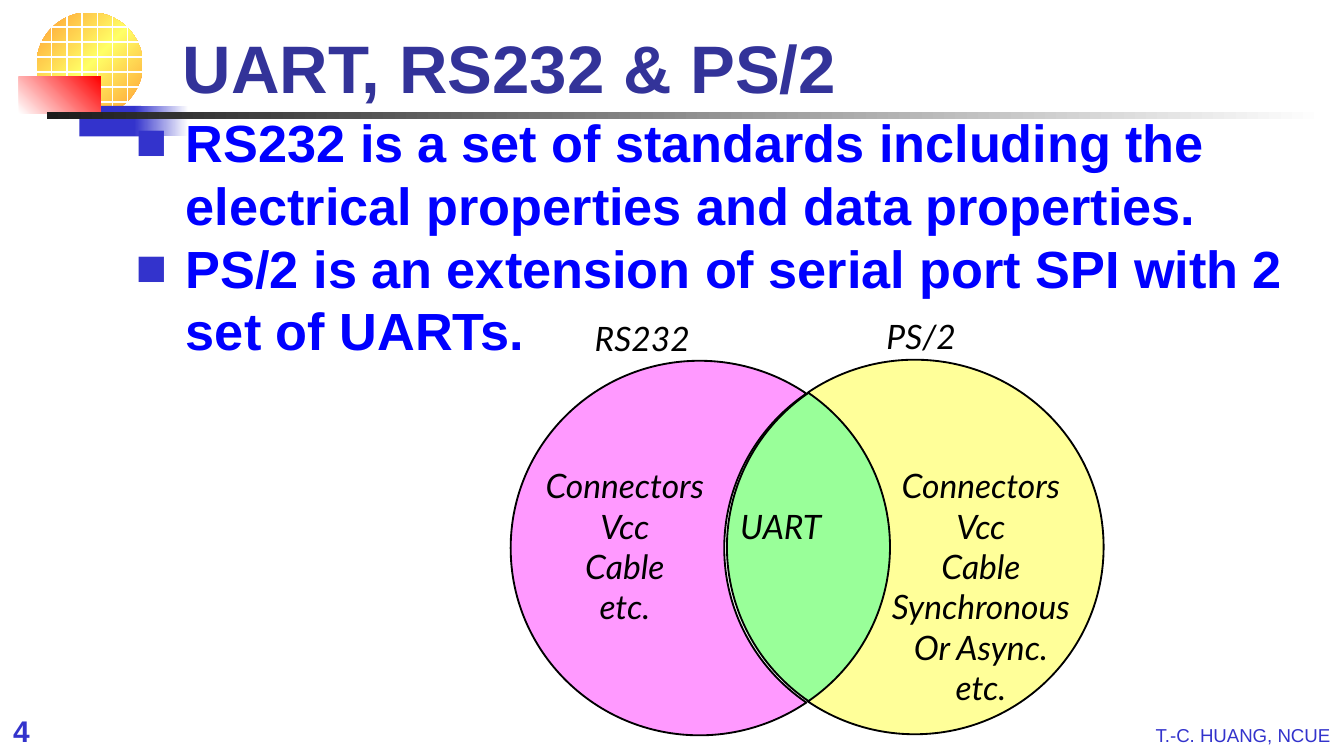
import dataclasses
import copy
import math

import lxml.etree
import pptx
import pptx.dml.color
import pptx.enum.shapes
import pptx.enum.text
import pptx.oxml.ns
import pptx.util

Cm = pptx.util.Cm
Pt = pptx.util.Pt
Align = pptx.enum.text.PP_ALIGN
Anchor = pptx.enum.text.MSO_ANCHOR
Preset = pptx.enum.shapes.MSO_SHAPE

COLORS = {
    "title": "333399", "body": "0000FF", "accent": "3333CC", "ink": "000000",
    "white": "FFFFFF", "orange": "FF9933", "sun": "FFFF66", "red": "FF0000",
    "bar": "1C1C1C", "shared": "99FF99", "ps2": "FFFF99", "rs232": "FF99FF",
}


@dataclasses.dataclass
class Area:
    left: float
    top: float
    width: float
    height: float

    def lengths(self) -> tuple:
        return tuple(Cm(value) for value in (self.left, self.top, self.width, self.height))


@dataclasses.dataclass
class Block:
    area: Area
    stops: tuple
    angle: float = 0
    preset: int = Preset.RECTANGLE


@dataclasses.dataclass
class Label:
    area: Area
    lines: tuple


SUN = Area(0.69, 0.23, 2.01, 1.98)
GRID_COUNT = 7
BLOCKS = (
    Block(Area(1.5, 2, 1.17, 0.58), ("accent",)),
    Block(Area(2.54, 2, 1.02, 0.58), ("accent", "white")),
    Block(Area(0.36, 1.45, 1.55, 0.69), ("white", "red"), 45),
    Block(Area(0.89, 2.12, 24.16, 0.13), ("bar", "white")),
)
LABELS = (
    Label(Area(13.74, 9.43, 2.03, 1.02), ("UART",)),
    Label(Area(11, 5.89, 2.28, 1.02), ("RS232",)),
    Label(Area(16.51, 5.84, 1.8, 1.02), ("PS/2",)),
    Label(Area(10.06, 8.67, 3.5, 3.33), ("Connectors", "Vcc", "Cable", "etc.")),
    Label(Area(16.61, 8.67, 3.86, 4.88),
          ("Connectors", "Vcc", "Cable", "Synchronous", "Or Async.", "etc.")),
)
BODY = (
    "RS232 is a set of standards including the electrical properties and data properties.",
    "PS/2 is an extension of serial port SPI with 2 set of UARTs.",
)
RADIUS_X, RADIUS_Y = 3.57, 3.54
HALF_CHORD = 2.92
SPREAD = math.asin(HALF_CHORD / RADIUS_Y)
OFFSET = RADIUS_X * math.cos(SPREAD)
QUARTER = math.pi / 2


def rgb(name: str) -> pptx.dml.color.RGBColor:
    return pptx.dml.color.RGBColor.from_string(COLORS[name])


def write(para, text: str, *, size: float, color: str, font: str = "Arial",
          bold: bool = False, italic: bool = False) -> None:
    span = para.add_run()
    span.text = text
    span.font.name = font
    span.font.size = Pt(size)
    span.font.bold = bold
    span.font.italic = italic
    span.font.color.rgb = rgb(color)


def add_child(parent, tag: str, **attributes: str):
    return lxml.etree.SubElement(parent, pptx.oxml.ns.qn(tag), attributes)


def outline(shape, color: str, width: float) -> None:
    shape.line.color.rgb = rgb(color)
    shape.line.width = Pt(width)


def draw_block(page, block: Block) -> None:
    shape = page.shapes.add_shape(block.preset, *block.area.lengths())
    shape.shadow.inherit = False
    shape.line.fill.background()
    if len(block.stops) == 1:
        shape.fill.solid()
        shape.fill.fore_color.rgb = rgb(block.stops[0])
        return
    shape.fill.gradient()
    shape.fill.gradient_angle = block.angle
    stop_list = shape.element.find(".//" + pptx.oxml.ns.qn("a:gsLst"))
    while len(stop_list) < len(block.stops):
        stop_list.append(copy.deepcopy(stop_list[-1]))
    for index, stop in enumerate(shape.fill.gradient_stops):
        stop.position = index / (len(block.stops) - 1)
        stop.color.rgb = rgb(block.stops[index])


def draw_grid(page, area: Area, count: int) -> None:
    width, height = area.width / count, area.height / count
    for column in range(count):
        for row in range(count):
            cell = Area(area.left + column * width, area.top + row * height, width, height)
            shape = page.shapes.add_shape(Preset.RECTANGLE, *cell.lengths())
            shape.shadow.inherit = False
            shape.fill.background()
            outline(shape, "white", 0.75)


def arc(x: float, y: float, side: int, offset: float, angles: tuple) -> list:
    def spot(angle: float, pull: float) -> tuple:
        across = math.cos(angle) - pull * math.sin(angle)
        down = math.sin(angle) + pull * math.cos(angle)
        return Cm(x + side * (offset + RADIUS_X * across)), Cm(y + RADIUS_Y * down)

    points = []
    for start, end in zip(angles, angles[1:]):
        pull = 4 / 3 * math.tan((end - start) / 4)
        points += [spot(start, pull), spot(end, -pull), spot(end, 0)]
    return points


def lens(x: float, y: float) -> list:
    return (arc(x, y, 1, -OFFSET, (-SPREAD, 0, SPREAD))
            + arc(x, y, -1, -OFFSET, (SPREAD, 0, -SPREAD)))


def crescent(x: float, y: float, side: int) -> list:
    reach = math.pi - SPREAD
    return (arc(x, y, side, OFFSET, (-reach, -QUARTER, 0, QUARTER, reach))
            + arc(x, y, side, -OFFSET, (SPREAD, 0, -SPREAD)))


def draw_region(page, points: list, color: str) -> None:
    builder = page.shapes.build_freeform(*points[-1])
    builder.add_line_segments(points, close=True)
    shape = builder.convert_to_shape()
    segments = shape.element.findall(".//" + pptx.oxml.ns.qn("a:lnTo"))
    for index in range(0, len(segments), 3):
        curve = lxml.etree.Element(pptx.oxml.ns.qn("a:cubicBezTo"))
        segments[index].addprevious(curve)
        for segment in segments[index:index + 3]:
            curve.append(segment[0])
            segment.getparent().remove(segment)
    shape.shadow.inherit = False
    shape.fill.solid()
    shape.fill.fore_color.rgb = rgb(color)
    outline(shape, "ink", 1)


def draw_label(page, label: Label) -> None:
    frame = page.shapes.add_textbox(*label.area.lengths()).text_frame
    frame.word_wrap = False
    frame.margin_left = frame.margin_right = 0
    for index, line in enumerate(label.lines):
        para = frame.add_paragraph() if index else frame.paragraphs[0]
        para.alignment = Align.CENTER
        write(para, line, size=18, color="ink", font="Lato", italic=True)


def draw_footer(page) -> None:
    frame = page.shapes.add_textbox(*Area(0, 13.34, 25.4, 0.94).lengths()).text_frame
    frame.word_wrap = True
    para = frame.paragraphs[0]
    tabs = add_child(para._p.get_or_add_pPr(), "a:tabLst")
    for position, align in ((12.47, "ctr"), (24.89, "r")):
        add_child(tabs, "a:tab", pos=str(Cm(position)), algn=align)
    write(para, "4", size=16, color="accent", bold=True)
    write(para, "\t", size=14, color="accent", bold=True)
    write(para, "\t", size=12, color="accent")
    write(para, "T.-C. HUANG, NCUE", size=10, color="accent")


def place(page, holder, area: Area, anchor):
    holder.left, holder.top, holder.width, holder.height = area.lengths()
    page.shapes._spTree.append(holder.element)
    frame = holder.text_frame
    frame.word_wrap = True
    frame.auto_size = pptx.enum.text.MSO_AUTO_SIZE.NONE
    frame.vertical_anchor = anchor
    return frame


def fill_body(frame) -> None:
    for index, line in enumerate(BODY):
        para = frame.add_paragraph() if index else frame.paragraphs[0]
        para.alignment = Align.LEFT
        para.line_spacing = 1.0
        para.space_before = para.space_after = Pt(0)
        properties = para._p.get_or_add_pPr()
        properties.set("marL", str(Cm(0.95)))
        properties.set("indent", str(Cm(-0.95)))
        bullet_color = add_child(properties, "a:buClr")
        add_child(bullet_color, "a:srgbClr", val=COLORS["accent"])
        add_child(properties, "a:buFont", typeface="Arial")
        add_child(properties, "a:buChar", char="■")
        write(para, line, size=28, color="body", bold=True)


def main() -> None:
    deck = pptx.Presentation()
    deck.slide_width, deck.slide_height = Cm(25.4), Cm(14.29)
    page = deck.slides.add_slide(deck.slide_layouts[1])
    title, body = page.placeholders[0], page.placeholders[1]

    draw_footer(page)
    draw_block(page, Block(SUN, ("orange", "sun", "orange"), 315, Preset.OVAL))
    draw_grid(page, SUN, GRID_COUNT)
    for block in BLOCKS:
        draw_block(page, block)

    para = place(page, title, Area(3.2, 0.14, 21.64, 2.01), Anchor.BOTTOM).paragraphs[0]
    para.alignment = Align.LEFT
    write(para, "UART, RS232 & PS/2", size=36, color="title", bold=True)
    fill_body(place(page, body, Area(2.31, 1.96, 22.58, 11.99), Anchor.TOP))

    draw_region(page, lens(15.29, 10.34), "shared")
    draw_region(page, crescent(15.27, 10.34, 1), "ps2")
    draw_region(page, crescent(15.24, 10.36, -1), "rs232")
    for label in LABELS:
        draw_label(page, label)
    deck.save("out.pptx")


if __name__ == "__main__":
    main()
